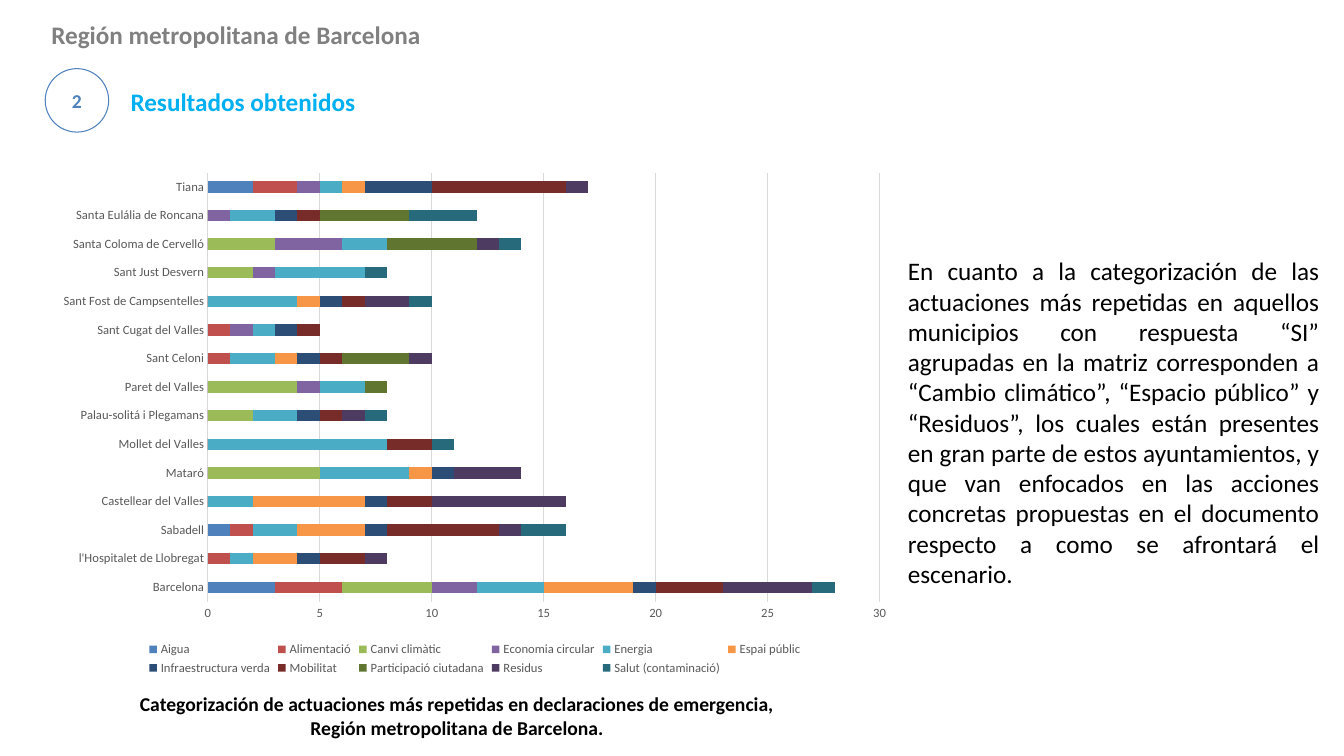
from dataclasses import dataclass

from pptx import Presentation
from pptx.chart.data import CategoryChartData
from pptx.dml.color import RGBColor
from pptx.enum.chart import XL_CHART_TYPE, XL_LEGEND_POSITION, XL_TICK_MARK
from pptx.enum.shapes import MSO_SHAPE
from pptx.enum.text import MSO_ANCHOR, MSO_AUTO_SIZE, PP_ALIGN
from pptx.util import Cm, Pt


@dataclass(frozen=True)
class Theme:
    font: str = "Calibri"
    text: str = "000000"
    title: str = "808080"
    heading: str = "00B0F0"
    badge: str = "4F81BD"
    axis: str = "595959"
    grid: str = "D9D9D9"
    body_size: int = 18
    caption_size: int = 14
    chart_size: int = 9
    line_width: float = 0.75


THEME = Theme()

MUNICIPALITIES = [
    "Barcelona", "l'Hospitalet de Llobregat", "Sabadell",
    "Castellear del Valles", "Mataró", "Mollet del Valles",
    "Palau-solitá i Plegamans", "Paret del Valles", "Sant Celoni",
    "Sant Cugat del Valles", "Sant Fost de Campsentelles",
    "Sant Just Desvern", "Santa Coloma de Cervelló",
    "Santa Eulália de Roncana", "Tiana",
]

ACTIONS = [
    ("Aigua", "4F81BD", (3, 0, 1, 0, 0, 0, 0, 0, 0, 0, 0, 0, 0, 0, 2)),
    ("Alimentació", "C0504D", (3, 1, 1, 0, 0, 0, 0, 0, 1, 1, 0, 0, 0, 0, 2)),
    ("Canvi climàtic", "9BBB59", (4, 0, 0, 0, 5, 0, 2, 4, 0, 0, 0, 2, 3, 0, 0)),
    ("Economia circular", "8064A2", (2, 0, 0, 0, 0, 0, 0, 1, 0, 1, 0, 1, 3, 1, 1)),
    ("Energia", "4BACC6", (3, 1, 2, 2, 4, 8, 2, 2, 2, 1, 4, 4, 2, 2, 1)),
    ("Espai públic", "F79646", (4, 2, 3, 5, 1, 0, 0, 0, 1, 0, 1, 0, 0, 0, 1)),
    ("Infraestructura verda", "2C4D75", (1, 1, 1, 1, 1, 0, 1, 0, 1, 1, 1, 0, 0, 1, 3)),
    ("Mobilitat", "772C2A", (3, 2, 5, 2, 0, 2, 1, 0, 1, 1, 1, 0, 0, 1, 6)),
    ("Participació ciutadana", "5F7530", (0, 0, 0, 0, 0, 0, 0, 1, 3, 0, 0, 0, 4, 4, 0)),
    ("Residus", "4D3B62", (4, 1, 1, 6, 3, 0, 1, 0, 1, 0, 2, 0, 1, 0, 1)),
    ("Salut (contaminació)", "276A7C", (1, 0, 2, 0, 0, 1, 1, 0, 0, 0, 1, 1, 1, 3, 0)),
]

COMMENTARY = (
    "En cuanto a la categorización de las actuaciones más repetidas en aquellos "
    "municipios con respuesta “SI” agrupadas en la matriz corresponden a “Cambio "
    "climático”, “Espacio público” y “Residuos”, los cuales están presentes en gran "
    "parte de estos ayuntamientos, y que van enfocados en las acciones concretas "
    "propuestas en el documento respecto a como se afrontará el escenario."
)
CAPTION = (
    "Categorización de actuaciones más repetidas en declaraciones de emergencia, "
    "Región metropolitana de Barcelona."
)


def style_font(font, size, color, bold=False):
    font.name = THEME.font
    font.size = Pt(size)
    font.bold = bold
    font.color.rgb = RGBColor.from_string(color)


def style_line(line, color):
    line.color.rgb = RGBColor.from_string(color)
    line.width = Pt(THEME.line_width)


def write(sp, text, size, color, bold=False, align=PP_ALIGN.LEFT,
          anchor=MSO_ANCHOR.TOP, wrap=True):
    tf = sp.text_frame
    tf.text = text
    tf.word_wrap = wrap
    tf.auto_size = MSO_AUTO_SIZE.NONE
    tf.vertical_anchor = anchor
    p = tf.paragraphs[0]
    p.alignment = align
    style_font(p.runs[0].font, size, color, bold)


def add_title(s, left, top, width, height):
    sp = s.shapes.title
    sp.left, sp.top, sp.width, sp.height = left, top, width, height
    write(sp, "Región metropolitana de Barcelona", THEME.body_size, THEME.title,
          bold=True, wrap=False)


def add_section(s, left, top, width, height):
    badge = s.shapes.add_shape(MSO_SHAPE.FLOWCHART_CONNECTOR, left, top, height, height)
    badge.shadow.inherit = False
    badge.fill.background()
    style_line(badge.line, THEME.badge)
    write(badge, "2", THEME.caption_size, THEME.badge, bold=True,
          align=PP_ALIGN.CENTER, anchor=MSO_ANCHOR.MIDDLE)
    indent = Cm(1.9)
    heading = s.shapes.add_textbox(left + indent, top + Cm(0.31), width - indent, Cm(1.02))
    write(heading, "Resultados obtenidos", THEME.body_size, THEME.heading, bold=True)


def add_actions_chart(s, left, top, width, height):
    data = CategoryChartData()
    data.categories = MUNICIPALITIES
    for name, _, values in ACTIONS:
        data.add_series(name, values)
    chart = s.shapes.add_chart(
        XL_CHART_TYPE.BAR_STACKED, left, top, width, height, data).chart
    chart.has_title = False
    style_font(chart.font, THEME.chart_size, THEME.axis)

    plot = chart.plots[0]
    plot.gap_width = 150
    plot.overlap = 100
    plot.vary_by_categories = False
    for series, (_, color, _) in zip(plot.series, ACTIONS):
        series.format.fill.solid()
        series.format.fill.fore_color.rgb = RGBColor.from_string(color)

    for axis in (chart.category_axis, chart.value_axis):
        axis.major_tick_mark = axis.minor_tick_mark = XL_TICK_MARK.NONE
        style_font(axis.tick_labels.font, THEME.chart_size, THEME.axis)
    style_line(chart.category_axis.format.line, THEME.grid)
    chart.value_axis.format.line.fill.background()
    chart.value_axis.has_major_gridlines = True
    style_line(chart.value_axis.major_gridlines.format.line, THEME.grid)

    chart.has_legend = True
    chart.legend.position = XL_LEGEND_POSITION.BOTTOM
    chart.legend.include_in_layout = False
    style_font(chart.legend.font, THEME.chart_size, THEME.axis)


def add_caption(s, left, top, width, height):
    sp = s.shapes.add_textbox(left, top, width, height)
    write(sp, CAPTION, THEME.caption_size, THEME.text, bold=True, align=PP_ALIGN.CENTER)


def add_commentary(s, left, top, width, height):
    sp = s.shapes.add_textbox(left, top, width, height)
    write(sp, COMMENTARY, THEME.body_size, THEME.text, align=PP_ALIGN.JUSTIFY)


def main():
    prs = Presentation()
    prs.slide_width, prs.slide_height = Cm(33.87), Cm(19.05)
    s = prs.slides.add_slide(prs.slide_layouts[5])
    add_title(s, Cm(1.04), Cm(0.36), Cm(9.88), Cm(1.02))
    add_section(s, Cm(1.14), Cm(1.73), Cm(14.1), Cm(1.6))
    add_actions_chart(s, Cm(1.17), Cm(4.09), Cm(21.59), Cm(13.03))
    add_commentary(s, Cm(22.63), Cm(6.32), Cm(10.87), Cm(8.71))
    add_caption(s, Cm(3.05), Cm(17.32), Cm(16.94), Cm(1.45))
    prs.save("out.pptx")


if __name__ == "__main__":
    main()
